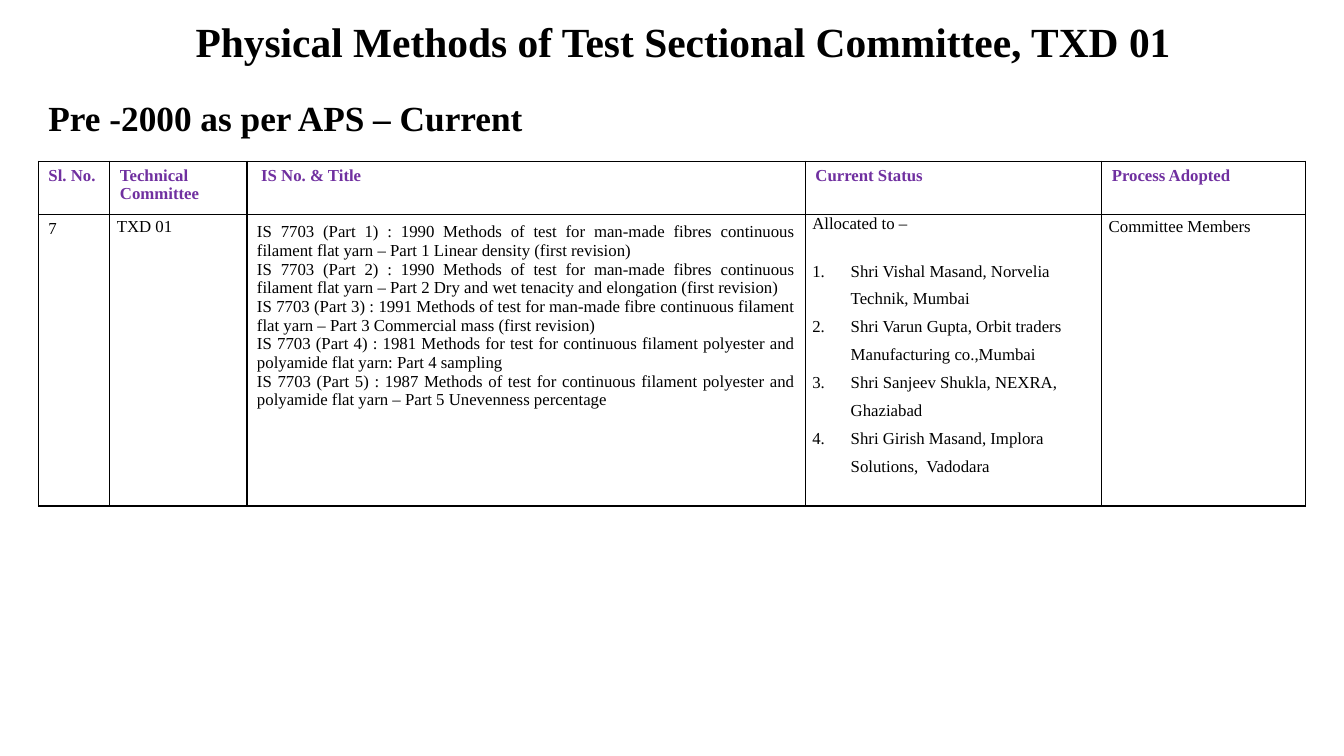
from lxml import etree
from pptx import Presentation
from pptx.dml.color import RGBColor
from pptx.enum import text as t
from pptx.oxml import ns
from pptx.util import Pt

FONT = "Times New Roman"
INK = {"black": "000000", "purple": "7030A0", "white": "FFFFFF"}


def style(para, size, color="black", bold=False):
    font = para.font
    font.name, font.size, font.bold = FONT, Pt(size), bold
    font.color.rgb = RGBColor.from_string(INK[color])


def border(cell):
    props = cell._tc.get_or_add_tcPr()
    for i, side in enumerate(("lnL", "lnR", "lnT", "lnB")):
        line = etree.Element(ns.qn("a:" + side), w=str(Pt(1)))
        fill = etree.SubElement(line, ns.qn("a:solidFill"))
        etree.SubElement(fill, ns.qn("a:srgbClr"), val=INK["black"])
        props.insert(i, line)


prs = Presentation()
prs.slide_width, prs.slide_height = Pt(960), Pt(540)
slide = prs.slides.add_slide(prs.slide_layouts[5])

title = slide.shapes.title
title.left, title.top, title.width, title.height = Pt(27.4), Pt(68.4), Pt(497.5), Pt(35.3)
head = slide.shapes.add_textbox(Pt(44.6), Pt(14.4), Pt(887.8), Pt(36))
for box, words, size, space, align in (
    (title, "Pre -2000 as per APS – Current", 25.2, 0.9, t.PP_ALIGN.LEFT),
    (head, "Physical Methods of Test Sectional Committee, TXD 01", 29.6, 0.8, t.PP_ALIGN.CENTER),
):
    frame = box.text_frame
    frame.text = words
    frame.word_wrap = True
    frame.auto_size = t.MSO_AUTO_SIZE.NONE
    frame.vertical_anchor = t.MSO_ANCHOR.MIDDLE
    para = frame.paragraphs[0]
    para.alignment, para.line_spacing = align, space
    style(para, size, bold=True)

heads = ["Sl. No.", "Technical Committee", " IS No. & Title", "Current Status", "Process Adopted"]
titles = [
    "IS 7703 (Part 1) : 1990 Methods of test for man-made fibres continuous filament flat yarn – Part 1 Linear density (first revision)",
    "IS 7703 (Part 2) : 1990 Methods of test for man-made fibres continuous filament flat yarn – Part 2 Dry and wet tenacity and elongation (first revision)",
    "IS 7703 (Part 3) : 1991 Methods of test for man-made fibre continuous filament flat yarn – Part 3 Commercial mass (first revision)",
    "IS 7703 (Part 4) : 1981 Methods for test for continuous filament polyester and polyamide flat yarn: Part 4 sampling",
    "IS 7703 (Part 5) : 1987 Methods of test for continuous filament polyester and polyamide flat yarn – Part 5 Unevenness percentage",
]
status = [
    "Allocated to –",
    "Shri Vishal Masand, Norvelia Technik, Mumbai",
    "Shri Varun Gupta, Orbit traders Manufacturing co.,Mumbai",
    "Shri Sanjeev Shukla, NEXRA, Ghaziabad",
    "Shri Girish Masand, Implora Solutions,  Vadodara",
]
rows = [heads, ["7", "TXD 01", "\n".join(titles), "\n".join(status), "Committee Members"]]
wide = [51.1, 97.9, 398.9, 211.7, 145.4]
high = [38.2, 208.1]
pads = [(7.2, 3.6), (5, 0), (7.2, 5.8), (5, 0), (5, 0)]

table = slide.shapes.add_table(2, 5, Pt(27.4), Pt(115.2), Pt(sum(wide)), Pt(sum(high))).table
table.first_row = table.horz_banding = False
for col, width in zip(table.columns, wide):
    col.width = Pt(width)
for r, row in enumerate(rows):
    table.rows[r].height = Pt(high[r])
    for c, words in enumerate(row):
        cell = table.cell(r, c)
        cell.text = words
        cell.fill.solid()
        cell.fill.fore_color.rgb = RGBColor.from_string(INK["white"])
        border(cell)
        side, edge = pads[c] if r else (7.2, 3.6)
        cell.margin_left = cell.margin_right = Pt(side)
        cell.margin_top = cell.margin_bottom = Pt(edge)
        for para in cell.text_frame.paragraphs:
            style(para, 12, "black" if r else "purple", not r)

for c in (1, 4):
    table.cell(1, c).text_frame.paragraphs[0].line_spacing = 1.15
for para in table.cell(1, 2).text_frame.paragraphs:
    para.alignment = t.PP_ALIGN.JUSTIFY

intro, *names = table.cell(1, 3).text_frame.paragraphs
intro.space_after = Pt(13.8)
for para in names:
    para.line_spacing = 1.5
    props = para._p.get_or_add_pPr()
    props.set("marL", str(Pt(27.4)))
    props.set("indent", str(-Pt(27.4)))
    mark = etree.Element(ns.qn("a:buFont"), typeface="+mj-lt")
    num = etree.Element(ns.qn("a:buAutoNum"), type="arabicPeriod")
    last = props.find(ns.qn("a:defRPr"))
    last.addprevious(mark)
    last.addprevious(num)

prs.save("out.pptx")
